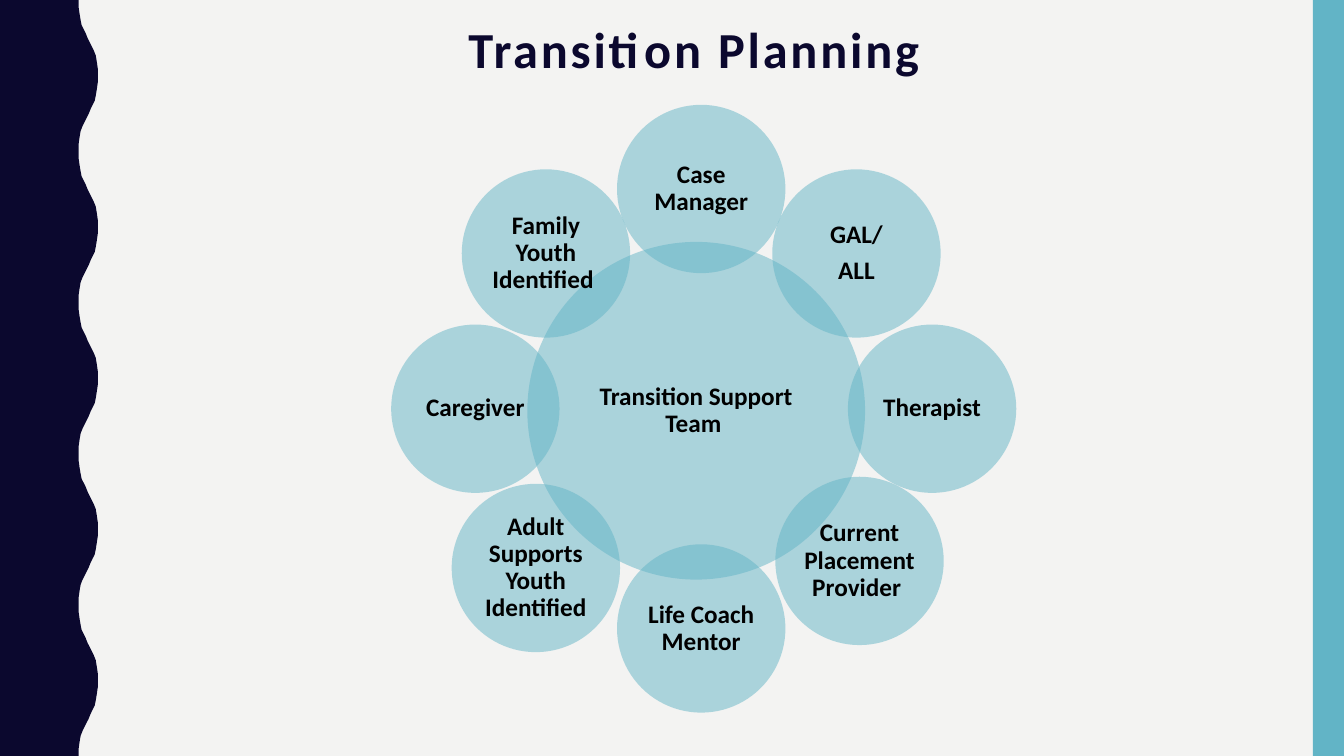
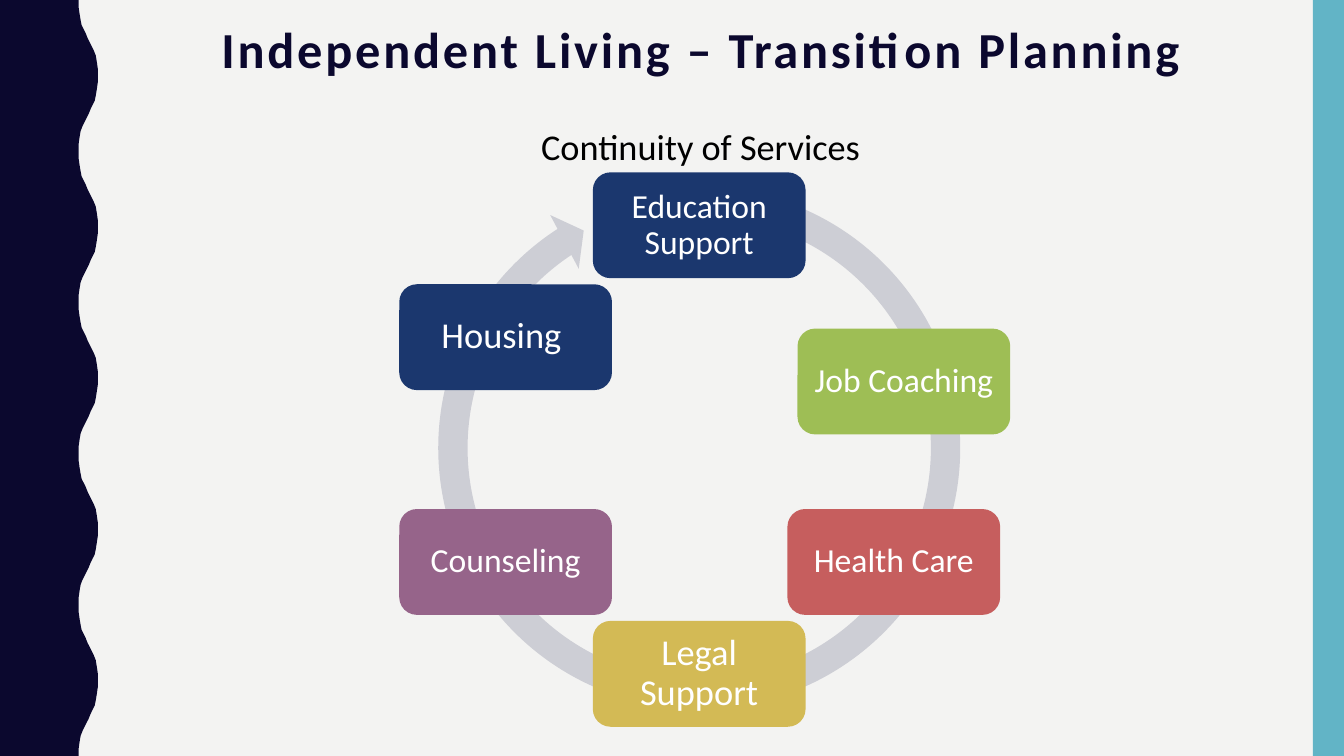
from lxml.etree import SubElement
from pptx import Presentation
from pptx.dml.color import RGBColor
from pptx.enum.shapes import MSO_SHAPE as Shape
from pptx.enum.text import MSO_ANCHOR as Anchor, PP_ALIGN as Align
from pptx.oxml.ns import qn
from pptx.util import Inches, Pt

COLORS = {
    "paper": "F3F3F2", "navy": "0B082E", "teal": "62B4C6", "black": "000000",
    "white": "FFFFFF", "ring": "CDCED5", "blue": "1B376E", "green": "9EBE55",
    "red": "C65E5E", "gold": "D3BA55", "purple": "96648A",
}
FONT = "Calibri"
WIDTH, HEIGHT = 13.33, 7.5
HALF_WAVE = 0.75
WAVE_LEFT, WAVE_RIGHT = 0.78, 0.97
WAVE_POINTS = [
    (0.78, 0), (0.78, 0.07), (0.79, 0.14), (0.8, 0.2), (0.81, 0.25),
    (0.83, 0.29), (0.85, 0.33), (0.87, 0.38), (0.89, 0.42), (0.91, 0.46),
    (0.93, 0.5), (0.95, 0.55), (0.96, 0.61), (0.97, 0.68),
]
HUB_SIZE, MEMBER_SIZE = 3.35, 1.67
TEAM = [
    ("Case Manager", 2.24, 0),
    ("GAL/\nALL", 3.78, 0.64),
    ("Therapist", 4.53, 2.18),
    ("Current Placement Provider ", 3.81, 3.69),
    ("Life Coach Mentor", 2.24, 4.36),
    ("Adult Supports Youth Identified", 0.6, 3.76),
    ("Caregiver", 0, 2.18),
    ("Family Youth Identified ", 0.7, 0.64),
]
RING_SIZE = 5.49
RING_ADJUSTMENTS = [0.053, 3.126, 142.096, 171.379, 0.055]
SERVICE_SIZE = (2.11, 1.05)
SERVICES = [
    ("Education Support", 1.92, 0.01, "blue", 24),
    ("Job Coaching", 3.95, 1.56, "green", 24),
    ("Health Care", 3.85, 3.35, "red", 24),
    ("Legal Support", 1.92, 4.46, "gold", 26),
    ("Counseling", 0, 3.35, "purple", 24),
    ("Housing ", 0, 1.12, "blue", 26),
]


def rgb(name):
    """Return the named colour."""
    return RGBColor.from_string(COLORS[name])


def write_text(shape, text, size, color="black", bold=False, inset=0.1,
               anchor=Anchor.MIDDLE, line_spacing=0.9, tracking=0):
    """Write centred paragraphs, one for each line of text."""
    frame = shape.text_frame
    frame.word_wrap = True
    frame.vertical_anchor = anchor
    frame.margin_left = frame.margin_right = Inches(inset)
    frame.margin_top = frame.margin_bottom = Inches(min(inset, 0.05))
    for index, line in enumerate(text.split("\n")):
        paragraph = frame.add_paragraph() if index else frame.paragraphs[0]
        paragraph.alignment = Align.CENTER
        paragraph.line_spacing = line_spacing
        paragraph.space_after = Pt(round(size * 0.35, 1))
        run = paragraph.add_run()
        run.text = line
        run.font.name = FONT
        run.font.size = Pt(size)
        run.font.bold = bold
        run.font.color.rgb = rgb(color)
        if tracking:
            run._r.get_or_add_rPr().set("spc", str(tracking * 100))


def paint(shape, color, opacity=100):
    """Give a shape a flat fill without line or shadow."""
    shape.shadow.inherit = False
    shape.fill.solid()
    shape.fill.fore_color.rgb = rgb(color)
    shape.line.fill.background()
    if opacity < 100:
        color_element = next(shape._element.spPr.iter(qn("a:srgbClr")))
        SubElement(color_element, qn("a:alpha")).set("val", str(opacity * 1000))


def add_filled(slide, kind, box, color, opacity=100):
    """Add a painted preset shape in a box given in inches."""
    shape = slide.shapes.add_shape(kind, *map(Inches, box))
    paint(shape, color, opacity)
    return shape


def add_text(slide, text, box, **text_format):
    """Add a text box in a box given in inches."""
    shape = slide.shapes.add_textbox(*map(Inches, box))
    write_text(shape, text, **text_format)


def add_wave_band(slide):
    """Draw the left band, whose edge swings every half wave."""
    edge = []
    for half in range(round(HEIGHT / HALF_WAVE)):
        for x, y in WAVE_POINTS:
            mirrored = WAVE_LEFT + WAVE_RIGHT - x
            edge.append((mirrored if half % 2 else x, y + half * HALF_WAVE))
    edge += [(WAVE_LEFT, HEIGHT), (0, HEIGHT)]
    builder = slide.shapes.build_freeform(0, 0, scale=1.0)
    builder.add_line_segments([(Inches(x), Inches(y)) for x, y in edge])
    paint(builder.convert_to_shape(), "navy")


def add_base_slide(presentation, title):
    """Add a slide with the shared background, bands and title."""
    slide = presentation.slides.add_slide(presentation.slide_layouts[6])
    slide.background.fill.solid()
    slide.background.fill.fore_color.rgb = rgb("paper")
    add_wave_band(slide)
    add_filled(slide, Shape.RECTANGLE, (13.02, 0, 0.31, HEIGHT), "teal")
    add_text(slide, title, (0.92, 0, 12.07, 1.03), size=36, color="navy",
             bold=True, tracking=2)
    return slide


def add_support_team(slide, left, top):
    """Draw the team hub with its ring of overlapping members."""
    hub = ("Transition Support Team ", 1.35, 1.36)
    for text, x, y in [hub, *TEAM]:
        diameter = HUB_SIZE if text == hub[0] else MEMBER_SIZE
        circle = add_filled(slide, Shape.OVAL,
                            (left + x, top + y, diameter, diameter), "teal", 50)
        write_text(circle, text, 18, bold=True, inset=0.03)


def add_service_cycle(slide, left, top):
    """Draw the circular arrow and the services along it."""
    ring = add_filled(slide, Shape.CIRCULAR_ARROW,
                      (left + 0.23, top, RING_SIZE, RING_SIZE), "ring")
    for index, value in enumerate(RING_ADJUSTMENTS):
        ring.adjustments[index] = value
    for text, x, y, color, size in SERVICES:
        card = add_filled(slide, Shape.ROUNDED_RECTANGLE,
                          (left + x, top + y, *SERVICE_SIZE), color)
        write_text(card, text, size, color="white")


def main():
    """Build and save the presentation."""
    presentation = Presentation()
    presentation.slide_width = Inches(WIDTH)
    presentation.slide_height = Inches(HEIGHT)

    team_slide = add_base_slide(presentation, "Transition Planning ")
    add_support_team(team_slide, 3.88, 1.04)

    cycle_slide = add_base_slide(
        presentation, "Independent Living – Transition Planning")
    add_text(cycle_slide, "Continuity of Services ", (1.27, 1.18, 11.44, 0.57),
             size=25.9, anchor=Anchor.TOP, line_spacing=1.0)
    add_service_cycle(cycle_slide, 3.96, 1.7)

    presentation.save("out.pptx")


if __name__ == "__main__":
    main()
